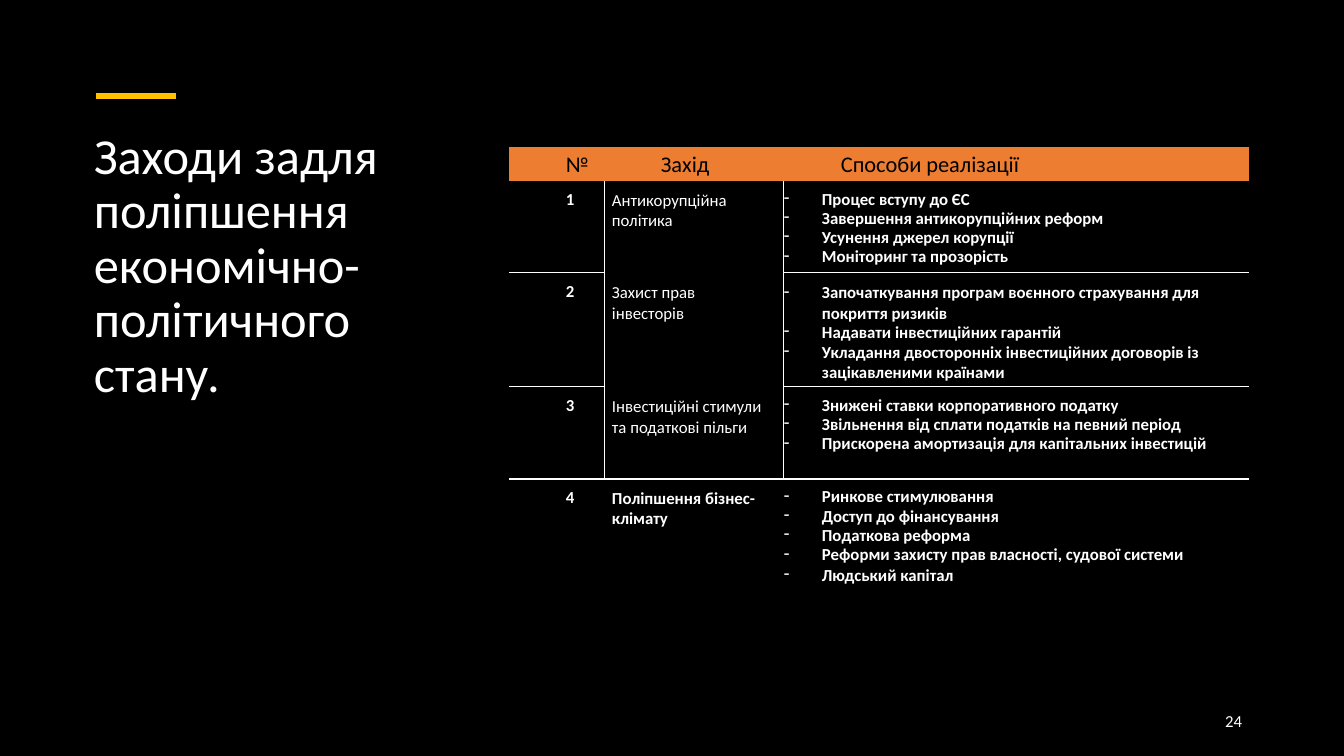
from lxml import etree
from pptx import Presentation
from pptx.dml.color import RGBColor
from pptx.enum.shapes import MSO_CONNECTOR
from pptx.enum.text import MSO_ANCHOR, PP_ALIGN
from pptx.oxml.ns import qn
from pptx.util import Pt

STRAIGHT = MSO_CONNECTOR.STRAIGHT
TOP, MIDDLE = MSO_ANCHOR.TOP, MSO_ANCHOR.MIDDLE
RIGHT = PP_ALIGN.RIGHT
PX = 914400 / 100.8
FONT = "Calibri"
COLORS = {"black": "000000", "white": "FFFFFF", "gold": "FFC000", "orange": "ED7D31"}


def px(length):
    """Turn whole px into EMU."""
    return round(length * PX)


def add_text(para, text, size, color="white", bold=False, spacing=None):
    if spacing:
        para.line_spacing = spacing
    run = para.add_run()
    run.text = text
    run.font.name = FONT
    run.font.size = Pt(size)
    run.font.bold = bold
    run.font.color.rgb = RGBColor.from_string(COLORS[color])


deck = Presentation()
deck.slide_width, deck.slide_height = px(1344), px(756)
page = deck.slides.add_slide(deck.slide_layouts[6])
page.background.fill.solid()
page.background.fill.fore_color.rgb = RGBColor.from_string(COLORS["black"])

# Title and accent line
title = page.shapes.add_textbox(px(84), px(126), px(357), px(383)).text_frame
title.word_wrap = True
add_text(title.paragraphs[0], "Заходи задля поліпшення економічно-політичного стану.", 36, spacing=0.9)

accent = page.shapes.add_connector(STRAIGHT, px(96), px(96), px(176), px(96))
accent.line.color.rgb = RGBColor.from_string(COLORS["gold"])
accent.line.width = Pt(4.5)
etree.SubElement(accent._element.spPr, qn("a:effectLst"))

# Table of measures: name, its line spacing, then (way, line spacing) pairs
HEADERS = ["№", "Захід", "Способи реалізації"]
MEASURES = [
    ("Антикорупційна політика", 0.98, [
        ("Процес вступу до ЄС", Pt(13.3)),
        ("Завершення антикорупційних реформ", Pt(13.8)),
        ("Усунення джерел корупції", Pt(13.8)),
        ("Моніторинг та прозорість", Pt(13.8))]),
    ("Захист прав інвесторів", None, [
        ("Започаткування програм воєнного страхування для покриття ризиків", None),
        ("Надавати інвестиційних гарантій", Pt(13.6)),
        ("Укладання двосторонніх інвестиційних договорів із зацікавленими країнами", 0.98)]),
    ("Інвестиційні стимули та податкові пільги", None, [
        ("Знижені ставки корпоративного податку", Pt(13.4)),
        ("Звільнення від сплати податків на певний період", Pt(13.8)),
        ("Прискорена амортизація для капітальних інвестицій", Pt(13.8))]),
    ("Поліпшення бізнес- клімату", 0.98, [
        ("Ринкове стимулювання", Pt(13.3)),
        ("Доступ до фінансування", Pt(13.8)),
        ("Податкова реформа", Pt(13.8)),
        ("Реформи захисту прав власності, судової системи", Pt(13.8)),
        ("Людський капітал", None)]),
]
COLUMN_WIDTHS = [95, 180, 465]
ROW_HEIGHTS = [34, 92, 114, 92, 132]
LAST_ROW = len(MEASURES)
THIN, THICK = Pt(0.75), Pt(2.25)

table = page.shapes.add_table(
    len(ROW_HEIGHTS), len(COLUMN_WIDTHS), px(509), px(147),
    px(sum(COLUMN_WIDTHS)), px(sum(ROW_HEIGHTS))).table
table.first_row = table.horz_banding = False
for column, width in zip(table.columns, COLUMN_WIDTHS):
    column.width = px(width)
for row, height in zip(table.rows, ROW_HEIGHTS):
    row.height = px(height)

# Cell fills, insets and borders
for r in range(len(ROW_HEIGHTS)):
    for c in range(len(COLUMN_WIDTHS)):
        cell = table.cell(r, c)
        cell.margin_left = cell.margin_right = cell.margin_bottom = 0
        cell.margin_top = px(10)
        cell.vertical_anchor = MIDDLE if r == 0 else TOP
        cell.fill.solid()
        cell.fill.fore_color.rgb = RGBColor.from_string(COLORS["black" if r else "orange"])

        inner_row = 0 < r < LAST_ROW
        thin_below = c != 1
        borders = {
            "lnL": THIN if inner_row and c > 0 else 0,
            "lnR": THIN if inner_row and c < 2 else 0,
            "lnT": THICK if r == LAST_ROW else THIN if r > 1 and thin_below else 0,
            "lnB": THICK if r == LAST_ROW - 1 else THIN if inner_row and thin_below else 0,
        }
        properties = cell._tc.get_or_add_tcPr()
        for place, (side, width) in enumerate(borders.items()):
            border = etree.Element(qn(f"a:{side}"), w=str(int(width)))
            if width:
                fill = etree.SubElement(border, qn("a:solidFill"))
                etree.SubElement(fill, qn("a:srgbClr"), val=COLORS["white"])
            else:
                etree.SubElement(border, qn("a:noFill"))
            properties.insert(place, border)

# Header texts
for c, header in enumerate(HEADERS):
    para = table.cell(0, c).text_frame.paragraphs[0]
    para._p.get_or_add_pPr().set("marL", str(px(57)))
    add_text(para, header, 16, "black", spacing=Pt(13.7))

# Measure texts
for r, (name, name_spacing, ways) in enumerate(MEASURES, start=1):
    para = table.cell(r, 0).text_frame.paragraphs[0]
    para._p.get_or_add_pPr().set("marL", str(px(57)))
    add_text(para, str(r), 12, bold=True, spacing=Pt(13.4))

    para = table.cell(r, 1).text_frame.paragraphs[0]
    indents = para._p.get_or_add_pPr()
    indents.set("marL", str(px(8)))
    indents.set("marR", str(px(18)))
    add_text(para, name, 12, bold=r == LAST_ROW, spacing=name_spacing)

    frame = table.cell(r, 2).text_frame
    for i, (way, way_spacing) in enumerate(ways):
        para = frame.add_paragraph() if i else frame.paragraphs[0]
        indents = para._p.get_or_add_pPr()
        indents.set("marL", str(px(38)))
        indents.set("indent", str(px(-38)))
        etree.SubElement(indents, qn("a:buChar"), char="-")
        add_text(para, way, 12, bold=True, spacing=way_spacing)

# Page number
number = page.shapes.add_textbox(px(950), px(701), px(302), px(40)).text_frame
number.word_wrap = True
number.vertical_anchor = MIDDLE
number.paragraphs[0].alignment = RIGHT
add_text(number.paragraphs[0], "24", 12)

deck.save("out.pptx")
